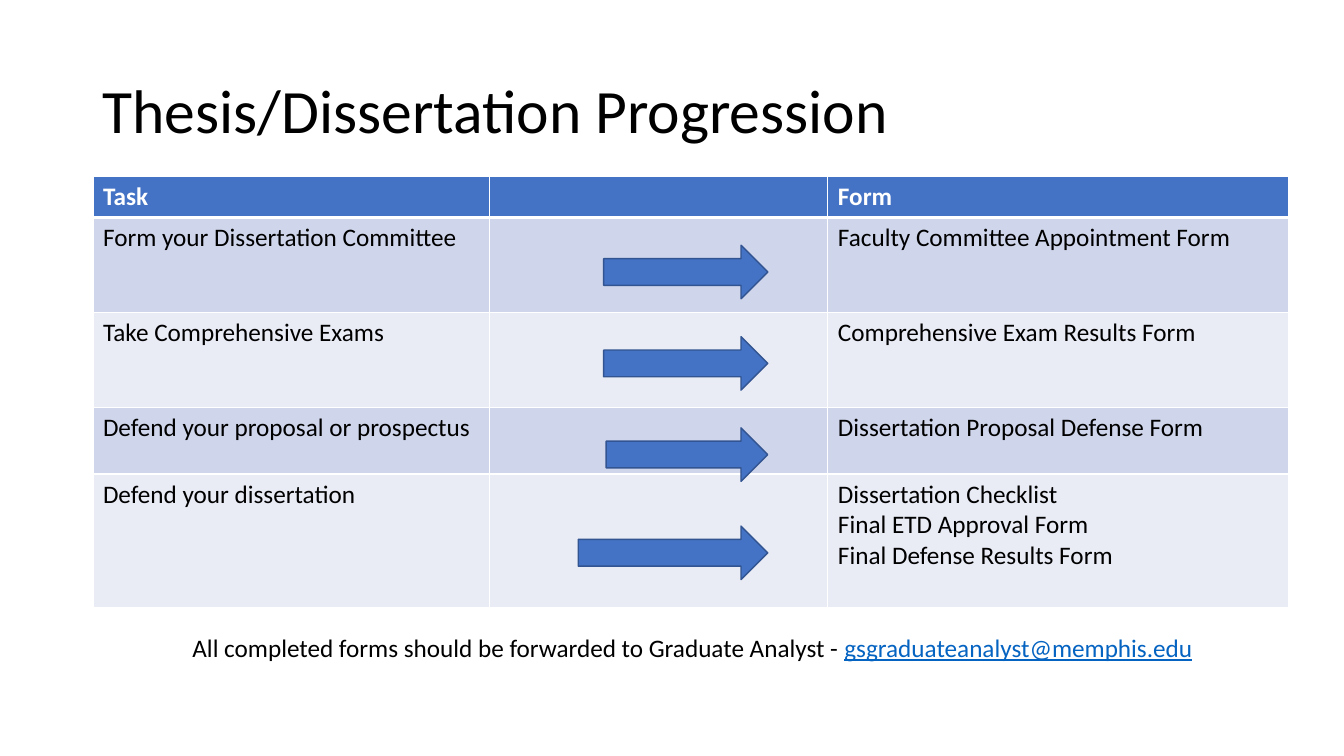
from dataclasses import dataclass

from lxml import etree
from pptx import Presentation
from pptx.dml.color import RGBColor
from pptx.enum.shapes import MSO_SHAPE
from pptx.enum.text import MSO_ANCHOR, MSO_AUTO_SIZE, PP_ALIGN
from pptx.oxml.ns import qn
from pptx.util import Pt

ARROW = MSO_SHAPE.RIGHT_ARROW
MIDDLE = MSO_ANCHOR.MIDDLE
LEFT = PP_ALIGN.LEFT
NO_FIT = MSO_AUTO_SIZE.NONE
GROW = MSO_AUTO_SIZE.SHAPE_TO_FIT_TEXT
TITLE_ONLY = 5


@dataclass(frozen=True)
class Theme:
    font: str = "Calibri"
    title: int = 44
    body: int = 18
    ink: str = "000000"
    paper: str = "FFFFFF"
    blue: str = "4472C4"
    edge: str = "325491"
    link: str = "0563C1"
    bands: tuple = ("E9EBF5", "CFD5EA")


THEME = Theme()
WIDTHS = (283, 242, 329)
HEIGHTS = (28.2, 67.8, 67.8, 47.6, 95.4)
STEPS = (
    ("Task", "Form"),
    ("Form your Dissertation Committee", "Faculty Committee Appointment Form"),
    ("Take Comprehensive Exams", "Comprehensive Exam Results Form"),
    ("Defend your proposal or prospectus", "Dissertation Proposal Defense Form"),
    ("Defend your dissertation",
     "Dissertation Checklist\nFinal ETD Approval Form\nFinal Defense Results Form"),
)
TIP = 548.4
ARROWS = ((431.2, 175.2), (431.2, 240.5), (433, 305.6), (413, 375.8))


def tint(name):
    return RGBColor.from_string(name)


def style(font, size, color, bold=False):
    font.name = THEME.font
    font.size = Pt(size)
    font.bold = bold
    font.color.rgb = tint(color)


def add_title(slide, text):
    title = slide.shapes.title
    title.left, title.top = Pt(66), Pt(28.8)
    title.width, title.height = Pt(828), Pt(104.4)
    frame = title.text_frame
    frame.text = text
    frame.auto_size = NO_FIT
    frame.vertical_anchor = MIDDLE
    para = frame.paragraphs[0]
    para.alignment = LEFT
    para.line_spacing = 0.9
    style(para.runs[0].font, THEME.title, THEME.ink)


def add_edge(cell, side, width):
    """Draw one cell border; call before the cell gets its fill."""
    props = cell._tc.get_or_add_tcPr()
    line = etree.SubElement(props, qn(f"a:ln{side}"), w=str(Pt(width)))
    fill = etree.SubElement(line, qn("a:solidFill"))
    etree.SubElement(fill, qn("a:srgbClr"), val=THEME.paper)


def fill_cell(cell, text, row):
    head = row == 0
    for side in "LRTB":
        thick = (head and side == "B") or (row == 1 and side == "T")
        add_edge(cell, side, 3 if thick else 1)
    cell.fill.solid()
    cell.fill.fore_color.rgb = tint(THEME.blue if head else THEME.bands[row % 2])
    cell.text_frame.text = text
    for para in cell.text_frame.paragraphs:
        style(para.font, THEME.body, THEME.ink)
        for run in para.runs:
            style(run.font, THEME.body, THEME.paper if head else THEME.ink, head)


def add_steps(slide):
    frame = slide.shapes.add_table(
        len(STEPS), len(WIDTHS), Pt(66.4), Pt(126.2),
        Pt(sum(WIDTHS)), Pt(sum(HEIGHTS)))
    table = frame.table
    for col, width in zip(table.columns, WIDTHS):
        col.width = Pt(width)
    for row, (task, form) in enumerate(STEPS):
        table.rows[row].height = Pt(HEIGHTS[row])
        for col, text in enumerate((task, "", form)):
            fill_cell(table.cell(row, col), text, row)


def add_arrow(slide, left, top):
    """Add an arrow whose tip meets the shared right edge."""
    arrow = slide.shapes.add_shape(
        ARROW, Pt(left), Pt(top), Pt(TIP - left), Pt(38.2))
    arrow.shadow.inherit = False
    arrow.fill.solid()
    arrow.fill.fore_color.rgb = tint(THEME.blue)
    arrow.line.color.rgb = tint(THEME.edge)
    arrow.line.width = Pt(1)


def add_note(slide, text, mail):
    box = slide.shapes.add_textbox(Pt(130.4), Pt(448), Pt(764), Pt(29))
    frame = box.text_frame
    frame.word_wrap = True
    frame.auto_size = GROW
    para = frame.paragraphs[0]
    for part, color in ((text, THEME.ink), (mail, THEME.link)):
        run = para.add_run()
        run.text = part
        style(run.font, THEME.body, color)
    para.runs[-1].font.underline = True


def main():
    deck = Presentation()
    deck.slide_width, deck.slide_height = Pt(960), Pt(540)
    slide = deck.slides.add_slide(deck.slide_layouts[TITLE_ONLY])
    add_title(slide, "Thesis/Dissertation Progression")
    add_steps(slide)
    for left, top in ARROWS:
        add_arrow(slide, left, top)
    add_note(slide, "All completed forms should be forwarded to Graduate Analyst - ",
             "gsgraduateanalyst@memphis.edu")
    deck.save("out.pptx")


if __name__ == "__main__":
    main()
